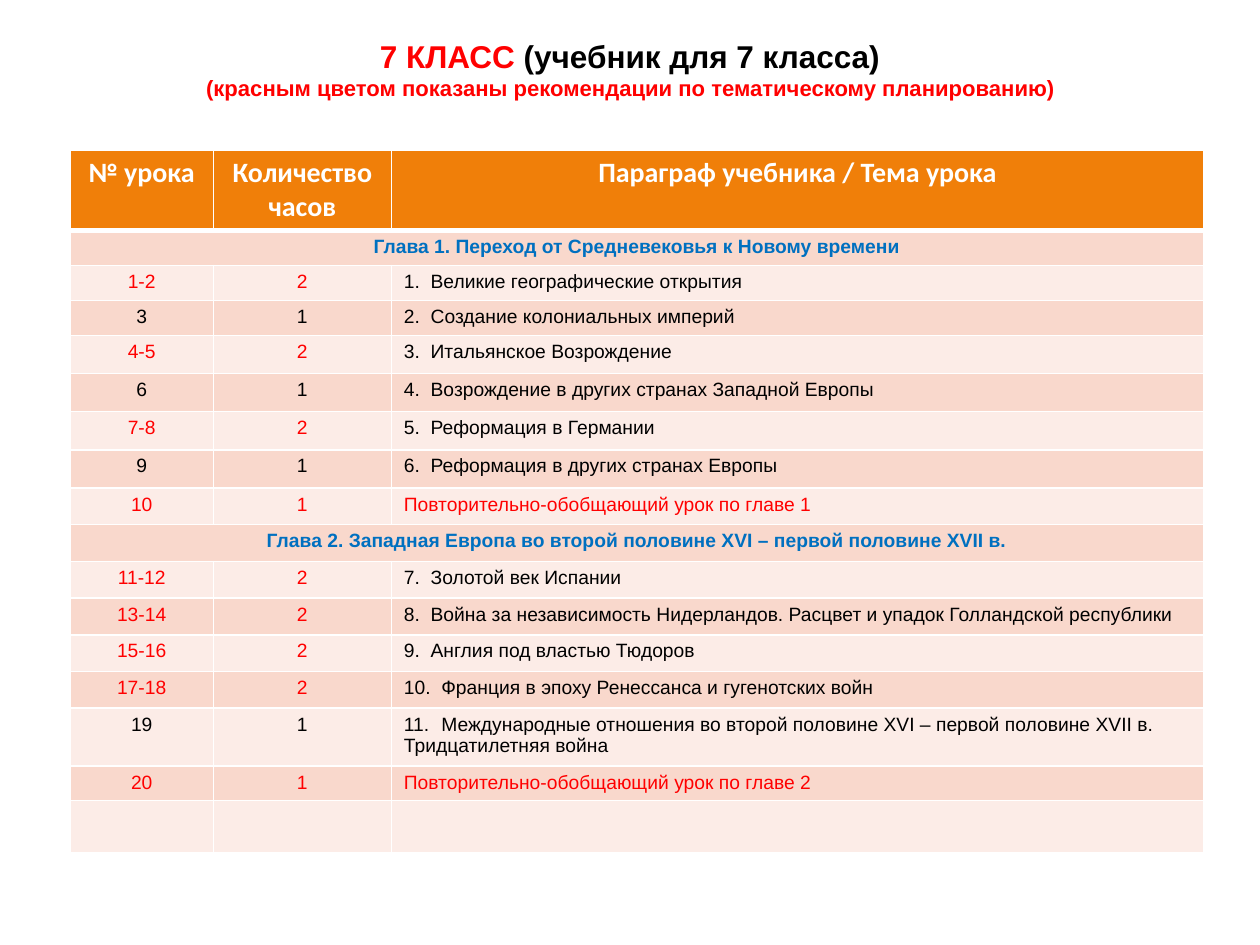
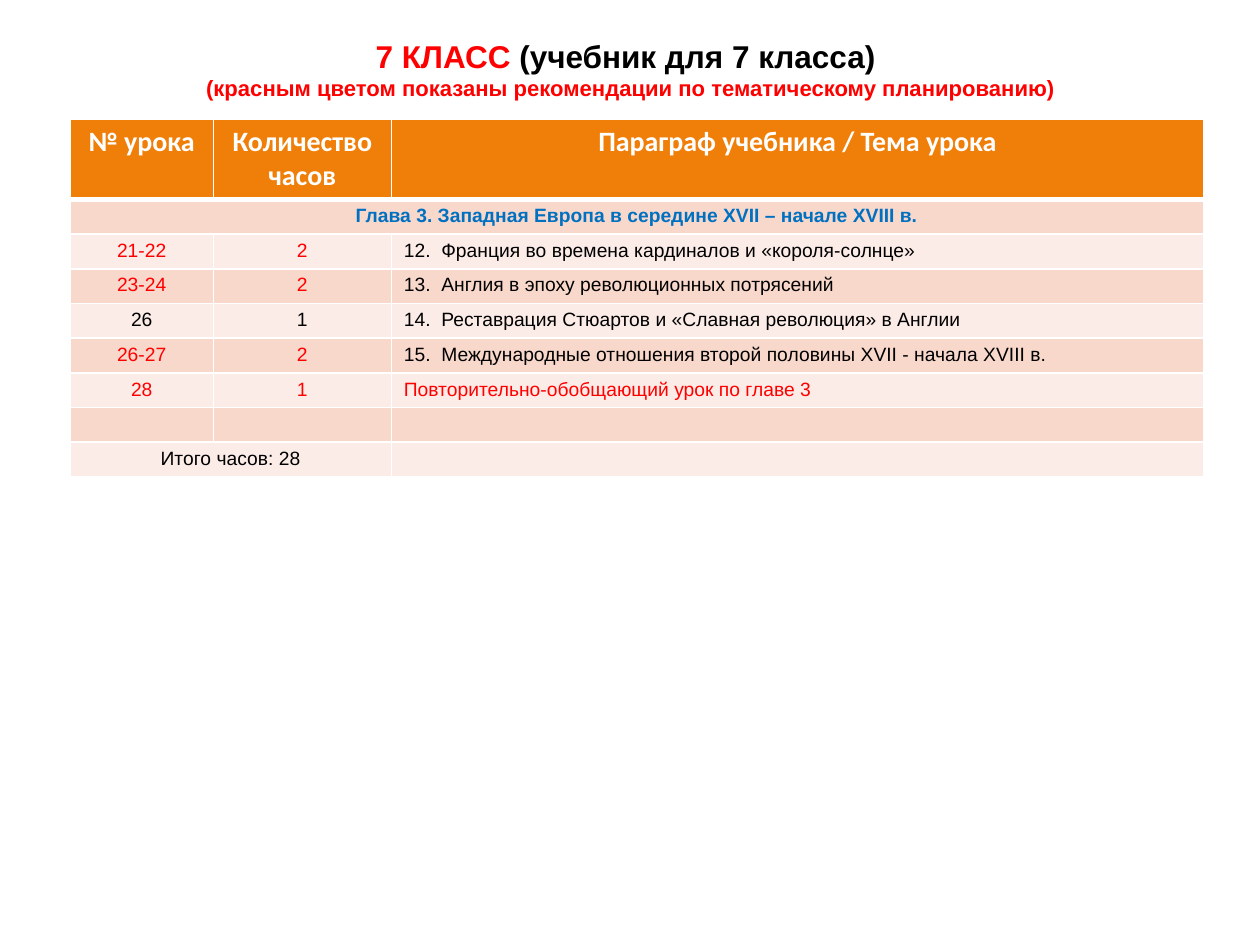
from dataclasses import dataclass
from typing import Optional, Union

from lxml.etree import SubElement
from pptx import Presentation
from pptx.dml.color import RGBColor
from pptx.enum.text import MSO_ANCHOR, PP_ALIGN as Align
from pptx.oxml.ns import qn
from pptx.util import Pt


# Theme
@dataclass(frozen=True)
class Theme:
    header: str = "F07F09"
    band_dark: str = "F9D8CC"
    band_light: str = "FCECE7"
    white: str = "FFFFFF"
    black: str = "000000"
    advice: str = "FF0000"
    chapter: str = "0070C0"
    body_font: str = "Arial"
    header_font: str = "Calibri"
    title_size: float = 18
    subtitle_size: float = 12.6
    header_size: float = 16
    body_size: float = 11


THEME = Theme()
LEFT = 40
COLUMN_WIDTHS = (82, 101.6, 464.4)
HEADER_HEIGHT = 46
HEADINGS = ("№ урока", "Количество часов", "Параграф учебника / Тема урока")


# Kinds of table rows
@dataclass(frozen=True)
class Chapter:
    title: str


@dataclass(frozen=True)
class Lesson:
    numbers: str
    hours: int
    topic: str
    section: Optional[int] = None  # a review lesson has no textbook section

    @property
    def is_review(self) -> bool:
        return self.section is None


@dataclass(frozen=True)
class Total:
    text: str


@dataclass(frozen=True)
class Spacer:
    pass


Row = Union[Chapter, Lesson, Total, Spacer]


@dataclass(frozen=True)
class Plan:
    book: str
    top: float
    rows: list[Row]
    heights: list[float]


PLANS = [
    Plan("(учебник для 7 класса)", 85.7, [
        Chapter("Глава 1. Переход от Средневековья к Новому времени"),
        Lesson("1-2", 2, "Великие географические открытия", 1),
        Lesson("3", 1, "Создание колониальных империй", 2),
        Lesson("4-5", 2, "Итальянское Возрождение", 3),
        Lesson("6", 1, "Возрождение в других странах Западной Европы", 4),
        Lesson("7-8", 2, "Реформация в Германии", 5),
        Lesson("9", 1, "Реформация в других странах Европы", 6),
        Lesson("10", 1, "Повторительно-обобщающий урок по главе 1"),
        Chapter("Глава 2. Западная Европа во второй половине XVI – первой половине XVII в."),
        Lesson("11-12", 2, "Золотой век Испании", 7),
        Lesson("13-14", 2, "Война за независимость Нидерландов. "
                           "Расцвет и упадок Голландской республики", 8),
        Lesson("15-16", 2, "Англия под властью Тюдоров", 9),
        Lesson("17-18", 2, "Франция в эпоху Ренессанса и гугенотских войн", 10),
        Lesson("19", 1, "Международные отношения во второй половине XVI – "
                        "первой половине XVII в. Тридцатилетняя война", 11),
        Lesson("20", 1, "Повторительно-обобщающий урок по главе 2"),
        Spacer(),
    ], [20] * 3 + [21.8] * 4 + [21] * 6 + [32, 19.8, 30]),
    Plan("(учебник для 7 класса) ", 68, [
        Chapter("Глава 3. Западная Европа в середине XVII – начале XVIII в."),
        Lesson("21-22", 2, "Франция во времена кардиналов и «короля-солнце»", 12),
        Lesson("23-24", 2, "Англия в эпоху революционных потрясений", 13),
        Lesson("26", 1, "Реставрация Стюартов и «Славная революция» в Англии", 14),
        Lesson("26-27", 2, "Международные отношения второй половины XVII - начала XVIII в.", 15),
        Lesson("28", 1, "Повторительно-обобщающий урок по главе 3"),
        Spacer(),
        Total("Итого часов: 28"),
    ], [19.4] * 8),
]


# Text
def write(paragraph, text: str, *, size: float = THEME.body_size, color: str = THEME.black,
          bold: bool = False, font: str = THEME.body_font, align: Align = Align.CENTER) -> None:
    paragraph.alignment = align
    run = paragraph.add_run()
    run.text = text
    run.font.size = Pt(size)
    run.font.bold = bold
    run.font.name = font
    run.font.color.rgb = RGBColor.from_string(color)


def add_title(slide, book: str) -> None:
    frame = slide.shapes.add_textbox(Pt(36), Pt(22), Pt(648), Pt(34.6)).text_frame
    frame.word_wrap = True
    frame.vertical_anchor = MSO_ANCHOR.MIDDLE
    frame.margin_top = frame.margin_bottom = 0
    title = frame.paragraphs[0]
    write(title, "7 КЛАСС ", size=THEME.title_size, color=THEME.advice, bold=True)
    write(title, book, size=THEME.title_size, bold=True)
    title.add_line_break()
    write(title, "(красным цветом показаны рекомендации по тематическому планированию)",
          size=THEME.subtitle_size, color=THEME.advice, bold=True)


# Table cells
def style_cell(cell, fill: str, top: float = 1, bottom: float = 1) -> None:
    cell.margin_top = cell.margin_bottom = Pt(3.3)
    properties = cell._tc.get_or_add_tcPr()
    for side, width in (("L", 1), ("R", 1), ("T", top), ("B", bottom)):
        border = SubElement(properties, qn(f"a:ln{side}"), w=str(Pt(width)))
        color = SubElement(SubElement(border, qn("a:solidFill")), qn("a:srgbClr"))
        color.set("val", THEME.white)
    cell.fill.solid()
    cell.fill.fore_color.rgb = RGBColor.from_string(fill)


def set_empty_size(cell) -> None:
    paragraph = cell.text_frame.paragraphs[0]._p
    SubElement(paragraph, qn("a:endParaRPr"), sz=str(round(THEME.body_size * 100)))


def set_tab(paragraph, position: float) -> None:
    tabs = SubElement(paragraph._p.get_or_add_pPr(), qn("a:tabLst"))
    SubElement(tabs, qn("a:tab"), pos=str(Pt(position)), algn="l")


def fill_lesson(paragraphs: list, lesson: Lesson) -> None:
    advised = lesson.is_review or lesson.hours > 1
    for paragraph, value in zip(paragraphs, (lesson.numbers, lesson.hours)):
        write(paragraph, str(value), color=THEME.advice if advised else THEME.black)
    topic = paragraphs[2]
    if lesson.is_review:
        write(topic, lesson.topic, color=THEME.advice, align=Align.LEFT)
    else:
        set_tab(topic, 15.3 if lesson.section < 10 else 21.4)
        write(topic, f"{lesson.section}.\t{lesson.topic}", align=Align.LEFT)


def fill_row(cells: list, row: Row) -> None:
    paragraphs = [cell.text_frame.paragraphs[0] for cell in cells]
    if isinstance(row, Chapter):
        cells[0].merge(cells[2])
        write(paragraphs[0], row.title, color=THEME.chapter, bold=True)
    elif isinstance(row, Total):
        cells[0].merge(cells[1])
        write(paragraphs[0], row.text)
    elif isinstance(row, Lesson):
        fill_lesson(paragraphs, row)
    for cell in cells:
        if not cell.text_frame.text:
            set_empty_size(cell)


# Lesson table
def add_plan_table(slide, plan: Plan) -> None:
    heights = [HEADER_HEIGHT, *plan.heights]
    table = slide.shapes.add_table(len(heights), len(COLUMN_WIDTHS), Pt(LEFT), Pt(plan.top),
                                   Pt(sum(COLUMN_WIDTHS)), Pt(sum(heights))).table
    for column, width in zip(table.columns, COLUMN_WIDTHS):
        column.width = Pt(width)
    for table_row, height in zip(table.rows, heights):
        table_row.height = Pt(height)

    for cell, heading in zip(table.rows[0].cells, HEADINGS):
        style_cell(cell, THEME.header, bottom=3)
        write(cell.text_frame.paragraphs[0], heading, size=THEME.header_size,
              color=THEME.white, bold=True, font=THEME.header_font)

    for index, row in enumerate(plan.rows, start=1):
        cells = list(table.rows[index].cells)
        for cell in cells:
            style_cell(cell, THEME.band_dark if index % 2 else THEME.band_light,
                       top=3 if index == 1 else 1)
        fill_row(cells, row)


def main() -> None:
    deck = Presentation()
    deck.slide_width, deck.slide_height = Pt(720), Pt(540)
    for plan in PLANS:
        slide = deck.slides.add_slide(deck.slide_layouts[6])
        add_title(slide, plan.book)
        add_plan_table(slide, plan)
    deck.save("out.pptx")


if __name__ == "__main__":
    main()
